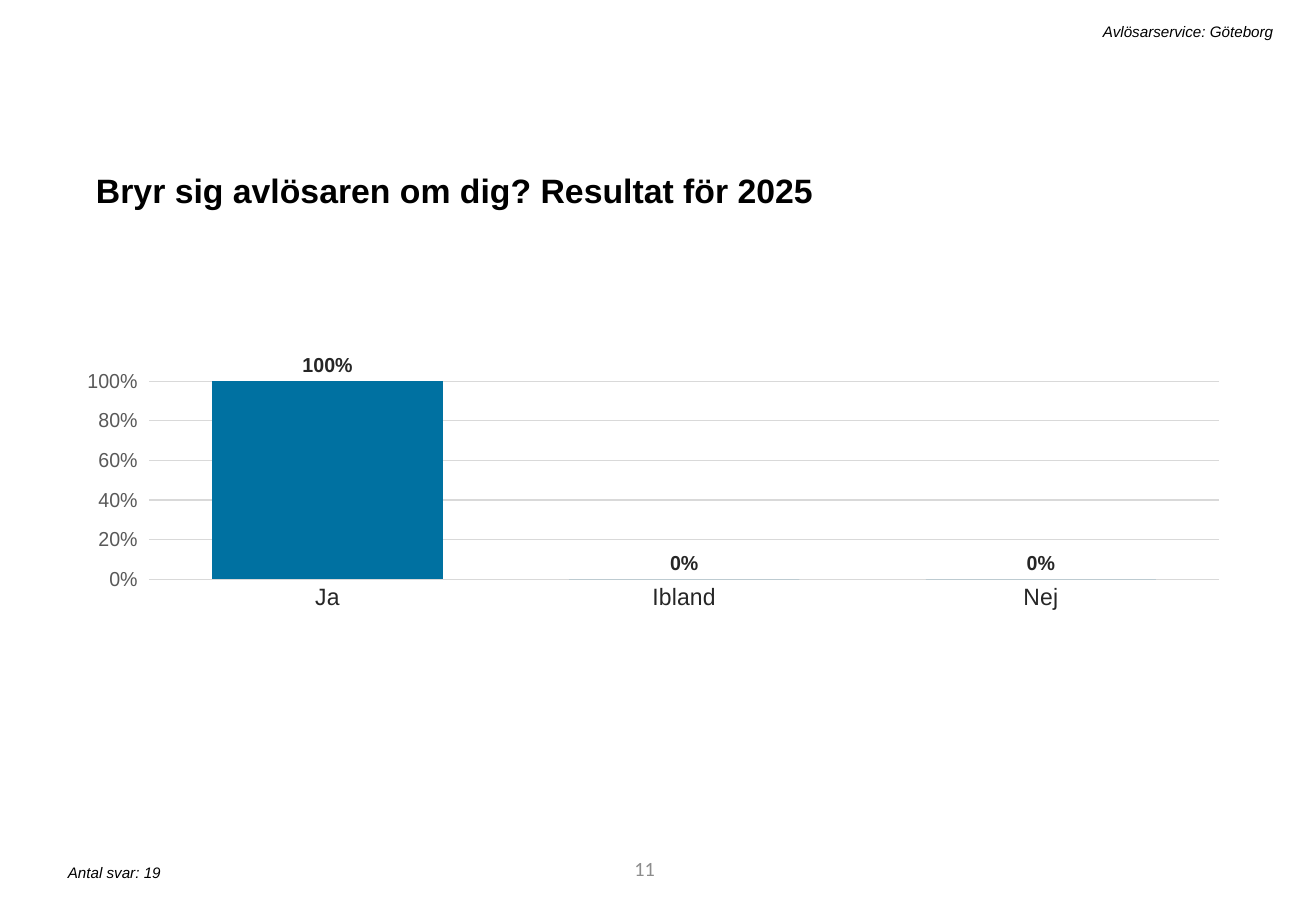
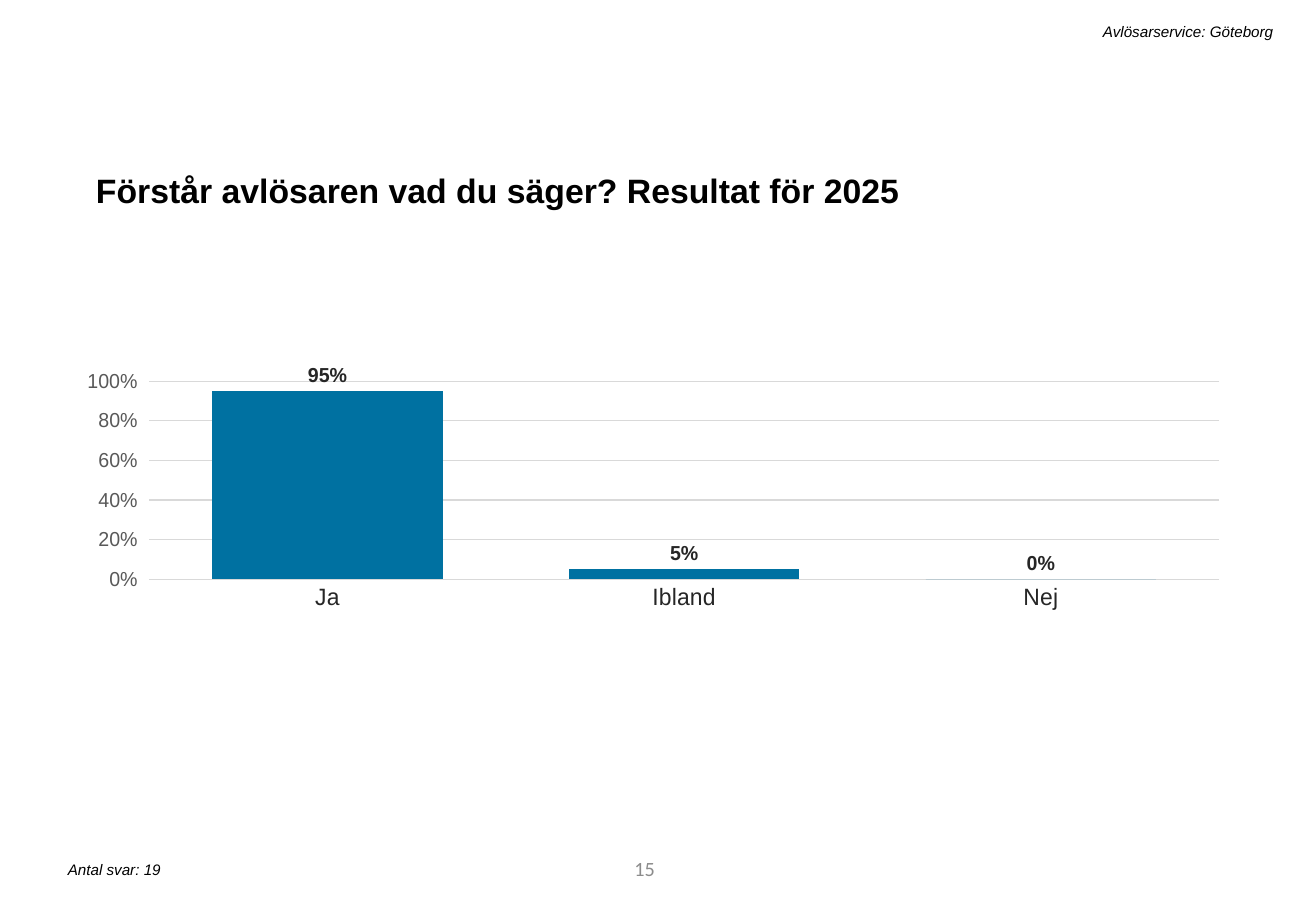
import pptx
import pptx.chart.data
import pptx.dml.color
import pptx.enum.chart
import pptx.enum.text
import pptx.oxml
import pptx.oxml.ns
import pptx.util

Pt = pptx.util.Pt
ALIGN = pptx.enum.text.PP_ALIGN
ANCHOR = pptx.enum.text.MSO_ANCHOR
TICK = pptx.enum.chart.XL_TICK_MARK

HEADER = "Avlösarservice: Göteborg"
ANSWERS = ("Ja", "Ibland", "Nej")
QUESTIONS = [
    {"title": "Bryr sig avlösaren om dig? Resultat för 2025", "page": "11",
     "count": "Antal svar: 19", "count_top": 508.3, "shares": (1, 0, 0)},
    {"title": "Förstår avlösaren vad du säger? Resultat för 2025", "page": "15",
     "count": "Antal svar: 19", "count_top": 506.2, "shares": (0.95, 0.05, 0)},
]

BLACK, DARK, GREY, PALE = "000000", "262626", "595959", "8C8C8C"
GRID, BAR = "D9D9D9", "0071A1"
PLOT = {"x": 0.025, "y": 0.154, "w": 0.966, "h": 0.413}  # fractions of the chart


def rgb(value):
    return pptx.dml.color.RGBColor.from_string(value)


def set_font(font, size, color, name="Arial", bold=False, italic=False):
    font.name, font.size = name, Pt(size)
    font.bold, font.italic = bold, italic
    font.color.rgb = rgb(color)


def set_line(line, color):
    line.color.rgb = rgb(color)
    line.width = Pt(0.75)


def add_label(slide, text, box, align=ALIGN.LEFT, anchor=ANCHOR.TOP, **font):
    frame = slide.shapes.add_textbox(*map(Pt, box)).text_frame
    frame.word_wrap = True
    frame.vertical_anchor = anchor
    paragraph = frame.paragraphs[0]
    paragraph.text = text
    paragraph.alignment = align
    set_font(paragraph.font, **font)


def add_title(slide, text):
    title = slide.shapes.title
    title.left, title.top, title.width, title.height = map(Pt, (49.7, 92.2, 676.8, 33.8))
    frame = title.text_frame
    frame.text = text
    frame.word_wrap = True
    frame.auto_size = pptx.enum.text.MSO_AUTO_SIZE.NONE
    frame.vertical_anchor = ANCHOR.TOP
    paragraph = frame.paragraphs[0]
    paragraph.alignment = ALIGN.LEFT
    paragraph.line_spacing = 1.2
    paragraph.space_before = Pt(10)
    set_font(paragraph.font, 20, BLACK, bold=True)


def fix_plot_area(chart):
    """Pin the inner plot area to the fractions in PLOT."""
    area = chart.element.find(".//" + pptx.oxml.ns.qn("c:plotArea"))
    for layout in area.findall(pptx.oxml.ns.qn("c:layout")):
        area.remove(layout)
    modes = "".join(f'<c:{side}Mode val="edge"/>' for side in "xy")
    sizes = "".join(f'<c:{side} val="{share}"/>' for side, share in PLOT.items())
    area.insert(0, pptx.oxml.parse_xml(
        f'<c:layout {pptx.oxml.ns.nsdecls("c")}><c:manualLayout>'
        f'<c:layoutTarget val="inner"/>{modes}{sizes}</c:manualLayout></c:layout>'))


def add_answer_chart(slide, shares):
    data = pptx.chart.data.CategoryChartData(number_format="0%")
    data.categories = ANSWERS
    data.add_series("Series 1", shares)
    chart = slide.shapes.add_chart(
        pptx.enum.chart.XL_CHART_TYPE.COLUMN_CLUSTERED,
        *map(Pt, (51.8, 182.2, 676.8, 284.4)), data).chart
    chart.has_title = chart.has_legend = False
    set_font(chart.font, 10, BLACK)
    fix_plot_area(chart)

    answers = chart.category_axis
    answers.major_tick_mark = TICK.NONE
    set_font(answers.tick_labels.font, 14, DARK)
    set_line(answers.format.line, GRID)

    scale = chart.value_axis
    scale.minimum_scale, scale.maximum_scale, scale.major_unit = 0, 1, 0.2
    scale.major_tick_mark = TICK.OUTSIDE
    scale.format.line.fill.background()
    scale.tick_labels.number_format = "0%"
    scale.tick_labels.number_format_is_linked = False
    set_font(scale.tick_labels.font, 12, GREY)
    set_line(scale.major_gridlines.format.line, GRID)

    plot = chart.plots[0]
    plot.gap_width = 55
    plot.vary_by_categories = False
    bars = plot.series[0]
    bars.format.fill.solid()
    bars.format.fill.fore_color.rgb = rgb(BAR)
    labels = bars.data_labels
    labels.show_value = True
    labels.number_format = "0%"
    labels.number_format_is_linked = False
    labels.position = pptx.enum.chart.XL_LABEL_POSITION.OUTSIDE_END
    set_font(labels.font, 12, DARK, bold=True)


def main():
    deck = pptx.Presentation()
    deck.slide_width, deck.slide_height = Pt(780), Pt(540)
    title_only = deck.slide_layouts[5]
    note = {"size": 9, "color": BLACK, "italic": True}
    for question in QUESTIONS:
        slide = deck.slides.add_slide(title_only)
        add_title(slide, question["title"])
        add_label(slide, question["page"], (219.6, 500.4, 175.7, 28.8), ALIGN.RIGHT,
                  ANCHOR.MIDDLE, size=12, color=PALE, name="Calibri")
        add_label(slide, question["count"],
                  (33.1, question["count_top"], 317.5, 18), **note)
        add_answer_chart(slide, question["shares"])
        add_label(slide, HEADER, (123.8, 9.4, 637.9, 18), ALIGN.RIGHT, **note)
    deck.save("out.pptx")


if __name__ == "__main__":
    main()
